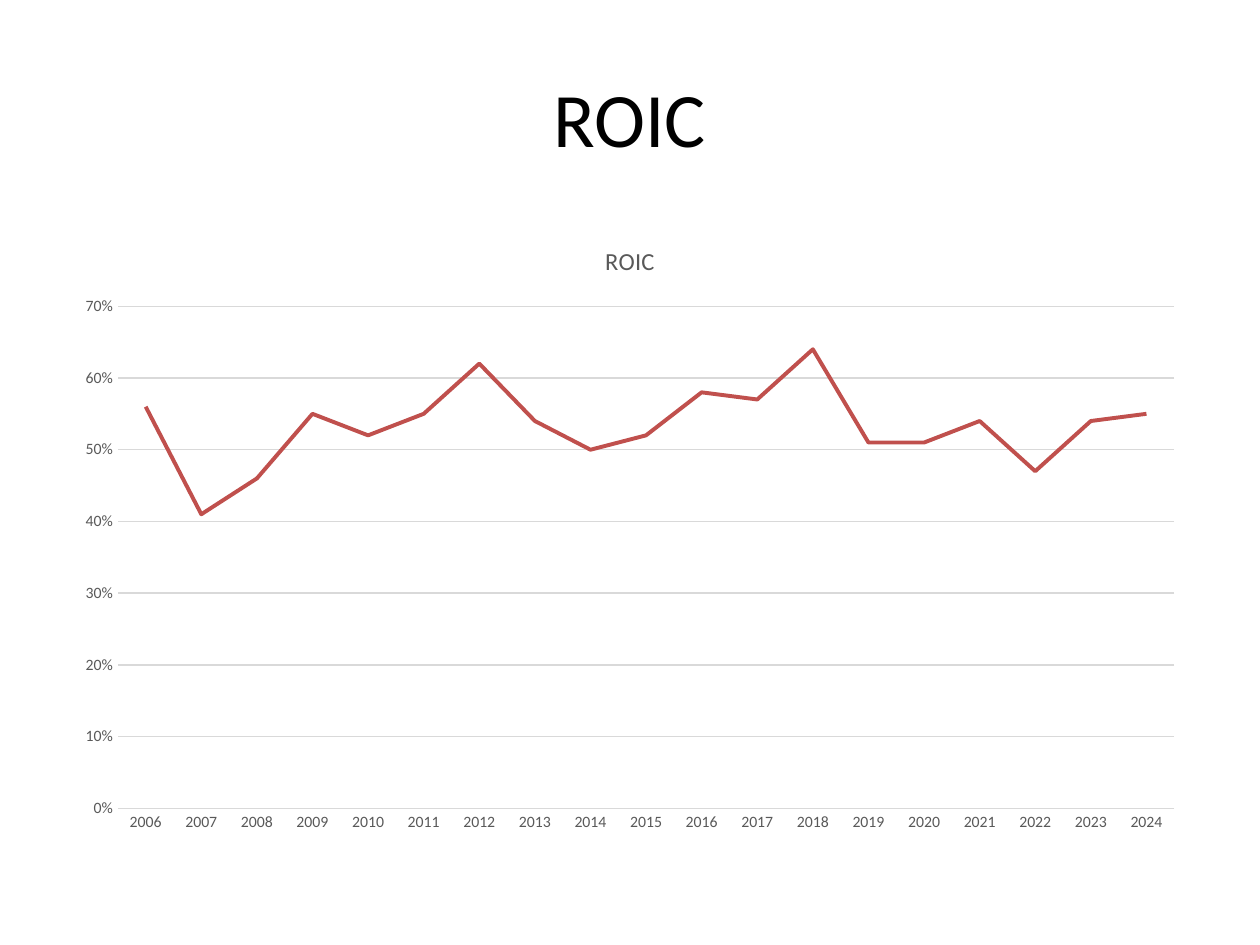
from pptx import Presentation
from pptx import util as u
from pptx.chart.data import CategoryChartData
from pptx.dml.color import RGBColor
from pptx.enum import chart as charts, text

# Content
TITLE = "ROIC"
FIRST_YEAR = 2006
ROIC = [0.56, 0.41, 0.46, 0.55, 0.52, 0.55, 0.62, 0.54, 0.5, 0.52,
        0.58, 0.57, 0.64, 0.51, 0.51, 0.54, 0.47, 0.54, 0.55]

# Theme and layout
THEME = {
    "font": "Calibri",
    "ink": "000000", "label": "595959", "grid": "D9D9D9", "series": "C0504D",
    "title": 44, "chart_title": 14, "chart": 10, "axis": 9,
    "thin": 0.75, "thick": 2.25,
}
TITLE_AREA = (0.5, 0.3, 9, 1.25)
CHART_AREA = (0.5, 1.75, 9, 4.95)


def style_font(font, size, color):
    font.name = THEME["font"]
    font.size = u.Pt(THEME[size])
    font.bold = False
    font.color.rgb = RGBColor.from_string(THEME[color])


def style_line(line, color, width):
    line.color.rgb = RGBColor.from_string(THEME[color])
    line.width = u.Pt(THEME[width])


def write(frame, words, size, color):
    para = frame.paragraphs[0]
    para.alignment = text.PP_ALIGN.CENTER
    span = para.add_run()
    span.text = words
    style_font(span.font, size, color)


def add_title(page):
    box = page.shapes.title
    box.left, box.top, box.width, box.height = map(u.Inches, TITLE_AREA)
    box.text_frame.vertical_anchor = text.MSO_ANCHOR.MIDDLE
    write(box.text_frame, TITLE, "title", "ink")


def add_roic_chart(page):
    data = CategoryChartData(number_format="0%")
    data.categories = [str(FIRST_YEAR + i) for i in range(len(ROIC))]
    data.add_series(TITLE, ROIC)
    chart = page.shapes.add_chart(
        charts.XL_CHART_TYPE.LINE, *map(u.Inches, CHART_AREA), data).chart
    style_font(chart.font, "chart", "ink")
    chart.has_legend = False
    chart.has_title = True
    write(chart.chart_title.text_frame, TITLE, "chart_title", "label")
    chart.chart_title.include_in_layout = False

    # Axes
    years, rates = chart.category_axis, chart.value_axis
    for axis in (years, rates):
        axis.major_tick_mark = axis.minor_tick_mark = charts.XL_TICK_MARK.NONE
        style_font(axis.tick_labels.font, "axis", "label")
    style_line(years.format.line, "grid", "thin")
    rates.format.line.fill.background()
    rates.minimum_scale, rates.maximum_scale, rates.major_unit = 0, 0.7, 0.1
    rates.tick_labels.number_format = "0%"
    rates.tick_labels.number_format_is_linked = False
    rates.has_major_gridlines = True
    style_line(rates.major_gridlines.format.line, "grid", "thin")

    # Series
    plot = chart.plots[0]
    plot.vary_by_categories = False
    series = plot.series[0]
    series.smooth = False
    series.marker.style = charts.XL_MARKER_STYLE.NONE
    style_line(series.format.line, "series", "thick")


def main():
    deck = Presentation()
    deck.slide_width, deck.slide_height = u.Inches(10), u.Inches(7.5)
    page = deck.slides.add_slide(deck.slide_layouts.get_by_name("Title Only"))
    add_title(page)
    add_roic_chart(page)
    deck.save("out.pptx")


if __name__ == "__main__":
    main()
